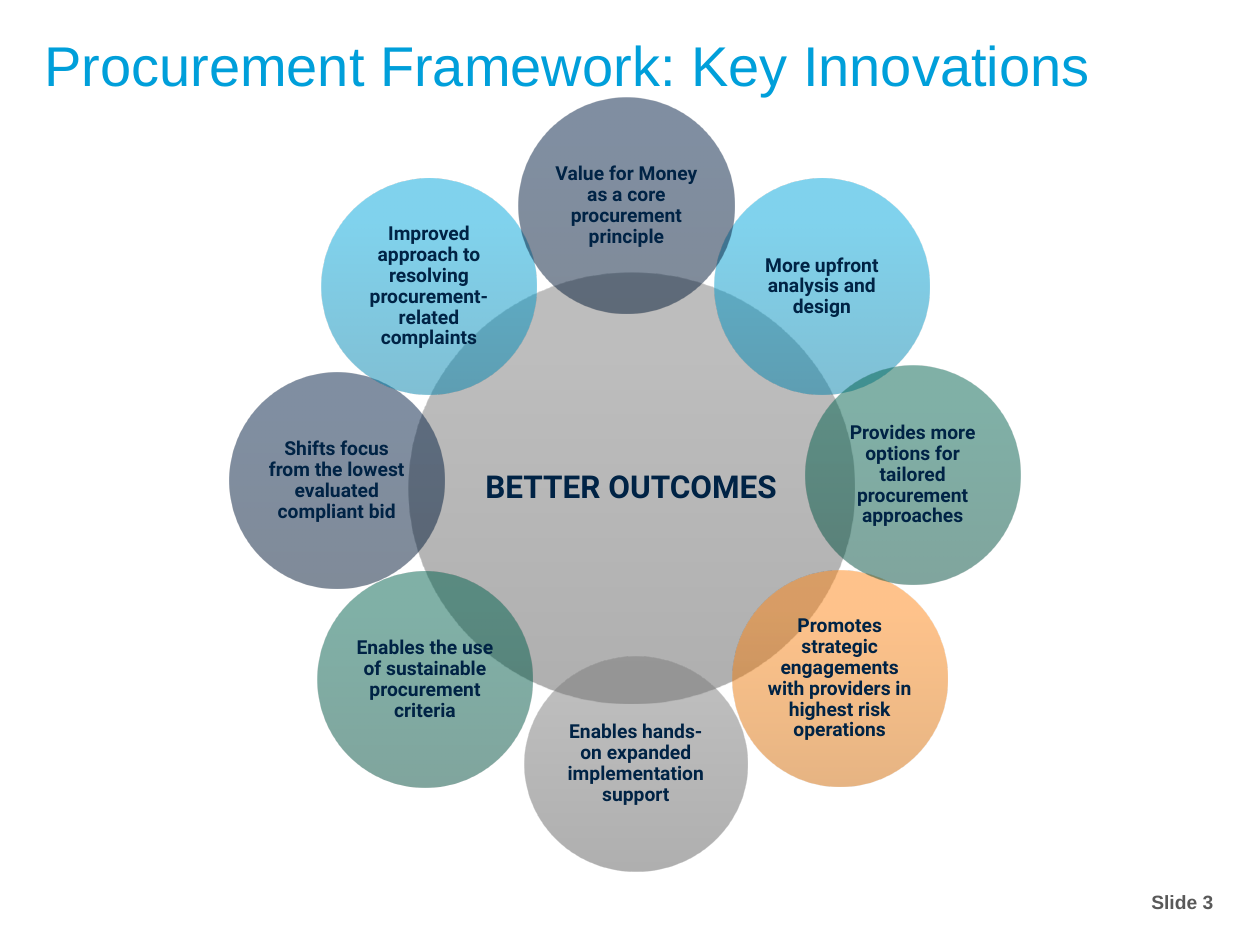
from lxml import etree
from pptx import Presentation
from pptx import util as u
from pptx.dml import color
from pptx.enum import shapes, text
from pptx.oxml import ns

THEME = {
    "title": {"name": "Arial", "size": u.Pt(32), "bold": False, "rgb": "009FDA"},
    "hub": {"name": "Roboto", "size": u.Pt(18), "bold": True, "rgb": "002345"},
    "petal": {"name": "Roboto", "size": u.Pt(11), "bold": True, "rgb": "002345"},
    "footer": {"name": "Arial", "size": u.Pt(11), "bold": True, "rgb": "595959"},
    "grey": ("5F5F5F", "7B7B7B"),
    "blue": ("0081AA", "00A8DD"),
    "navy": ("001733", "001E43"),
    "green": ("004B3C", "00614E"),
    "orange": ("CF6907", "FF8817"),
    "alpha": 50,
}
D = 4.34
CIRCLES = [
    ("BETTER OUTCOMES", "hub", "grey", 8.23, 5.49, 8.99, 8.69),
    ("More upfront analysis and design", "petal", "blue", 14.4, 3.61, D, D),
    ("Shifts focus from the lowest evaluated compliant bid", "petal", "navy", 4.62, 7.52, D, D),
    ("Enables the use of sustainable procurement criteria", "petal", "green", 6.4, 11.53, D, D),
    ("Promotes strategic engagements with providers in highest risk operations",
     "petal", "orange", 14.76, 11.51, D, D),
    ("Enables hands-on expanded implementation support", "petal", "grey", 10.57, 13.23, 4.5, D),
    ("Improved approach to resolving procurement-related complaints",
     "petal", "blue", 6.48, 3.61, D, D),
    ("Value for Money as a core procurement principle", "petal", "navy", 10.46, 1.98, D, D),
    ("Provides more options for tailored procurement approaches",
     "petal", "green", 16.23, 7.37, D, 4.42),
]


def write(tf, words, style, inset, anchor, align):
    formats = {"word_wrap": True, "auto_size": text.MSO_AUTO_SIZE.NONE, "vertical_anchor": anchor}
    for side, gap in zip(("left", "top", "right", "bottom"), inset):
        formats[f"margin_{side}"] = u.Cm(gap)
    for key, value in formats.items():
        setattr(tf, key, value)
    p = tf.paragraphs[0]
    p.alignment = align
    r = p.add_run()
    r.text = words
    for key, value in THEME[style].items():
        if key == "rgb":
            r.font.color.rgb = color.RGBColor.from_string(value)
        else:
            setattr(r.font, key, value)
    return p


def shade(s, tones):
    s.fill.gradient()
    s.fill.gradient_angle = 90
    for stop, position, tone in zip(s.fill.gradient_stops, (0, 0.8), tones):
        stop.position = position
        stop.color.rgb = color.RGBColor.from_string(tone)
    for clr in s._element.spPr.iter(ns.qn("a:srgbClr")):
        etree.SubElement(clr, ns.qn("a:alpha"), val=str(THEME["alpha"] * 1000))


prs = Presentation()
prs.slide_width, prs.slide_height = u.Cm(25.4), u.Cm(19.05)
slide = prs.slides.add_slide(prs.slide_layouts[5])

title = slide.shapes.title
for key, value in {"left": 0.89, "top": 0.38, "width": 23.6, "height": 1.6}.items():
    setattr(title, key, u.Cm(value))
write(title.text_frame, "Procurement Framework: Key Innovations", "title",
      (0, 0, 0, 0), text.MSO_ANCHOR.BOTTOM, text.PP_ALIGN.LEFT)

for words, style, tone, *box in CIRCLES:
    s = slide.shapes.add_shape(shapes.MSO_SHAPE.OVAL, *map(u.Cm, box))
    s.shadow.inherit = False
    s.line.fill.background()
    shade(s, THEME[tone])
    p = write(s.text_frame, words, style, (0.05,) * 4,
              text.MSO_ANCHOR.MIDDLE, text.PP_ALIGN.CENTER)
    p.line_spacing = 0.9

footer = slide.shapes.add_textbox(*map(u.Cm, (22.96, 17.81, 2.13, 1.02)))
write(footer.text_frame, "Slide 3", "footer", (0.25, 0.13, 0.25, 0.13),
      text.MSO_ANCHOR.TOP, text.PP_ALIGN.LEFT)

prs.save("out.pptx")
